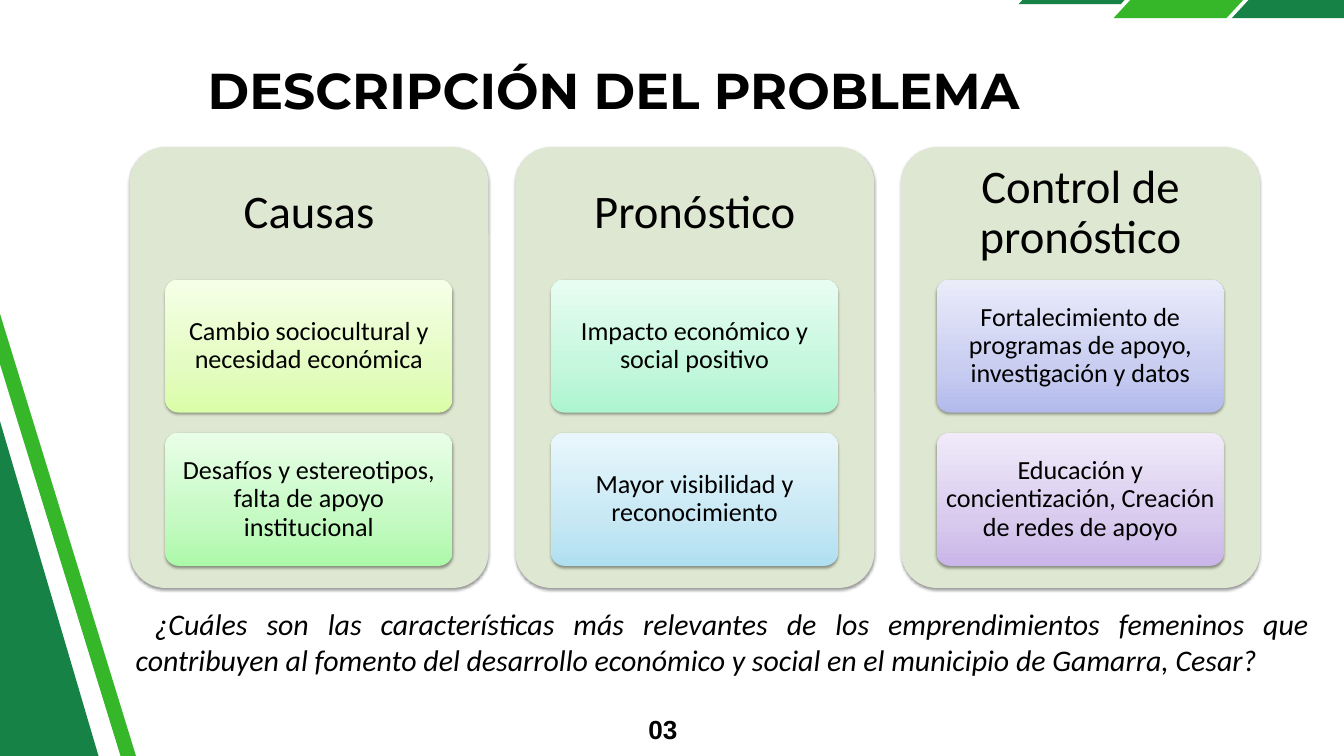
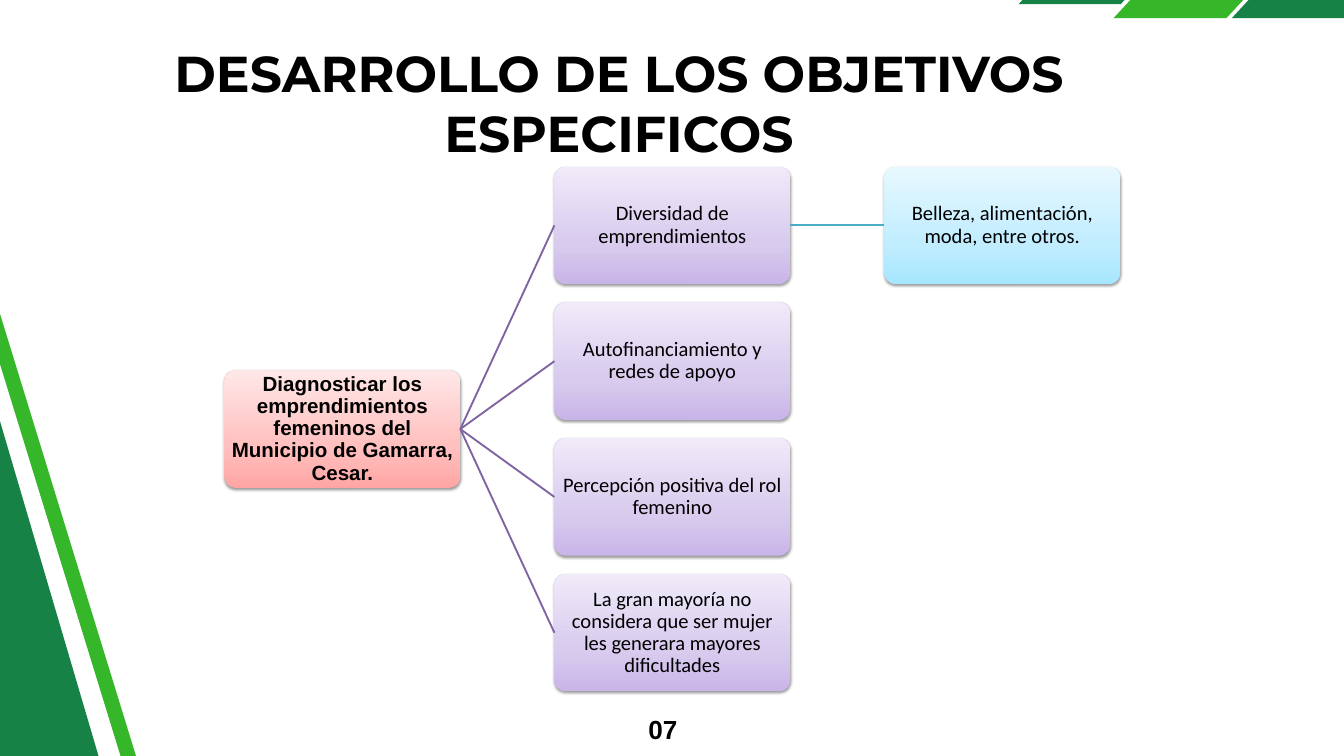
from copy import deepcopy
from dataclasses import dataclass

from lxml import etree
from pptx import Presentation
from pptx.dml.color import RGBColor
from pptx.enum.shapes import MSO_CONNECTOR, MSO_SHAPE
from pptx.enum.text import MSO_ANCHOR, MSO_AUTO_SIZE, PP_ALIGN
from pptx.oxml.ns import qn
from pptx.util import Inches, Pt

ROUNDED = MSO_SHAPE.ROUNDED_RECTANGLE
STRAIGHT = MSO_CONNECTOR.STRAIGHT
TOP, MIDDLE = MSO_ANCHOR.TOP, MSO_ANCHOR.MIDDLE
CENTER, RIGHT, JUSTIFY = PP_ALIGN.CENTER, PP_ALIGN.RIGHT, PP_ALIGN.JUSTIFY
NO_AUTOFIT = MSO_AUTO_SIZE.NONE
LEFT_SITE, RIGHT_SITE = 1, 3


@dataclass(frozen=True)
class Theme:
    title_font: str = "Montserrat"
    body_font: str = "Calibri"
    label_font: str = "Arial"
    title_size: int = 54
    heading_size: int = 50
    question_size: int = 32
    card_size: int = 28
    node_size: int = 22
    number_size: int = 28
    text: str = "000000"
    dark_green: str = "168246"
    bright_green: str = "35B729"
    panel: tuple = ("DEE7D1",)
    lime: tuple = ("DAFDA7", "E4FCC2", "F5FFE7")
    green: tuple = ("ACF9AA", "C5FAC3", "E8FEE7")
    mint: tuple = ("ACF5D0", "C5F7DD", "E8FDF2")
    aqua: tuple = ("AFE0F1", "C7E8F4", "E9F7FC")
    periwinkle: tuple = ("B2BAEC", "C9CEF1", "EAECFA")
    violet: tuple = ("C9B5E8", "D8CBEE", "F0EAF9")
    coral: tuple = ("FFA6A5", "FFC0BF", "FFE7E7")
    sky: tuple = ("A7E6FF", "C1EDFF", "E7F8FF")
    violet_line: str = "8064A2"
    sky_line: str = "4BACC6"


theme = Theme()


def write_text(shape, text, size, font, align=CENTER, anchor=TOP,
               margins=(0, 0, 0, 0), spacing=None, bold=False, italic=False):
    frame = shape.text_frame
    frame.word_wrap = True
    frame.auto_size = NO_AUTOFIT
    frame.vertical_anchor = anchor
    (frame.margin_left, frame.margin_top,
     frame.margin_right, frame.margin_bottom) = map(Inches, margins)
    paragraph = frame.paragraphs[0]
    paragraph.alignment = align
    paragraph.line_spacing = spacing
    run = paragraph.add_run()
    run.text = text
    run.font.name = font
    run.font.size = Pt(size)
    run.font.bold = bold
    run.font.italic = italic
    run.font.color.rgb = RGBColor.from_string(theme.text)


def add_card(slide, box, colours, text, size, margins, font=theme.body_font, bold=False):
    card = slide.shapes.add_shape(ROUNDED, *map(Inches, box))
    card.adjustments[0] = 0.1
    card.line.fill.background()
    properties = card.element.spPr
    if len(colours) == 1:
        card.fill.solid()
        card.fill.fore_color.rgb = RGBColor.from_string(colours[0])
    else:
        card.fill.gradient()
        card.fill.gradient_angle = 90
        stops = properties.find(".//" + qn("a:gsLst"))
        stops.insert(1, deepcopy(stops[0]))
        for stop, colour, position in zip(card.fill.gradient_stops, colours, (0, 0.35, 1)):
            stop.color.rgb = RGBColor.from_string(colour)
            stop.position = position
    card.shadow.inherit = False
    shadow = etree.SubElement(properties.find(qn("a:effectLst")), qn("a:outerShdw"),
                              blurRad="40000", dist="20000", dir="5400000", rotWithShape="0")
    shadow_colour = etree.SubElement(shadow, qn("a:srgbClr"), val="000000")
    etree.SubElement(shadow_colour, qn("a:alpha"), val="38000")
    write_text(card, text, size, font, CENTER, MIDDLE, margins, 0.9, bold)
    return card


presentation = Presentation()
presentation.slide_width = Inches(20)
presentation.slide_height = Inches(11.25)
layout = presentation.slide_layouts[5]

slides = []
for title, title_box, number in (
    ("DESCRIPCIÓN DEL PROBLEMA", (2.25, 0.88, 13.76, 0.91), "03"),
    ("DESARROLLO DE LOS OBJETIVOS ESPECIFICOS", (2.25, 0.62, 13.92, 1.82), "07"),
):
    slide = presentation.slides.add_slide(layout)
    heading = slide.shapes.title
    heading.left, heading.top, heading.width, heading.height = map(Inches, title_box)
    write_text(heading, title, theme.title_size, theme.title_font, bold=True)
    page_number = slide.shapes.add_textbox(*map(Inches, (9.52, 10.54, 0.56, 0.5)))
    write_text(page_number, number, theme.number_size, theme.label_font, RIGHT,
               spacing=Pt(39.2), bold=True)
    slides.append(slide)

problem_slide, objectives_slide = slides

for left, top, width, height, skew, rotation, colour in (
    (15.16, -0.86, 2.37, 0.92, 0.85, 0, theme.dark_green),
    (16.57, -1.06, 2.91, 1.33, 1.23, 0, theme.bright_green),
    (18.33, -1.06, 2.91, 1.33, 1.23, 0, theme.dark_green),
    (-10.09, 6.23, 16.41, 5.01, 0, 253.6, theme.dark_green),
    (-7.08, 8.59, 16.41, 0.22, 0, 252.9, theme.bright_green),
):
    right, bottom = left + width, top + height
    builder = problem_slide.shapes.build_freeform(Inches(left + skew), Inches(top))
    builder.add_line_segments([
        (Inches(x), Inches(y))
        for x, y in ((right, top), (right - skew, bottom), (left, bottom))
    ])
    band = builder.convert_to_shape()
    band.rotation = rotation
    band.fill.solid()
    band.fill.fore_color.rgb = RGBColor.from_string(colour)
    band.line.fill.background()
    band.shadow.inherit = False
    layout.shapes.element.append(band.element)

question = problem_slide.shapes.add_textbox(*map(Inches, (1.92, 8.96, 17.67, 1.18)))
write_text(question, " ¿Cuáles son las características más relevantes de los emprendimientos "
           "femeninos que contribuyen al fomento del desarrollo económico y social en el "
           "municipio de Gamarra, Cesar?", theme.question_size, theme.body_font, JUSTIFY,
           margins=(0.1, 0.05, 0.1, 0.05), italic=True)

columns = (
    ("Causas", (
        ("Cambio sociocultural y necesidad económica", theme.lime),
        ("Desafíos y estereotipos, falta de apoyo institucional", theme.green))),
    ("Pronóstico", (
        ("Impacto económico y social positivo", theme.mint),
        ("Mayor visibilidad y reconocimiento", theme.aqua))),
    ("Control de pronóstico", (
        ("Fortalecimiento de programas de apoyo, investigación y datos", theme.periwinkle),
        ("Educación y concientización, Creación de redes de apoyo", theme.violet))),
)
for column, (heading, cards) in enumerate(columns):
    panel_left = 1.93 + 5.74 * column
    add_card(problem_slide, (panel_left, 2.19, 5.34, 6.56), theme.panel, heading,
             theme.heading_size, (0.21, 0.21, 0.21, 4.8))
    for row, (text, colours) in enumerate(cards):
        add_card(problem_slide, (panel_left + 0.53, 4.16 + 2.28 * row, 4.27, 1.98), colours,
                 text, theme.card_size, (0.08, 0.06, 0.08, 0.06))

node_width, node_height = 3.51, 1.75
node_margins = (0.02, 0.02, 0.02, 0.02)
objective_left, finding_left, example_left = (3.34 + 4.91 * level for level in range(3))
first_top, row_pitch = 2.48, 2.02

objective = add_card(
    objectives_slide, (objective_left, first_top + 1.5 * row_pitch, node_width, node_height),
    theme.coral, "Diagnosticar los emprendimientos femeninos del Municipio de Gamarra, Cesar.",
    theme.node_size, node_margins, theme.label_font, True)
findings = [
    add_card(objectives_slide,
             (finding_left, first_top + row_pitch * row, node_width, node_height),
             theme.violet, text, theme.node_size, node_margins)
    for row, text in enumerate((
        "Diversidad de emprendimientos",
        "Autofinanciamiento y redes de apoyo",
        "Percepción positiva del rol femenino",
        "La gran mayoría no considera que ser mujer les generara mayores dificultades"))
]
example = add_card(objectives_slide, (example_left, first_top, node_width, node_height),
                   theme.sky, "Belleza, alimentación, moda, entre otros.",
                   theme.node_size, node_margins)

links = [(objective, finding, theme.violet_line) for finding in findings]
links.append((findings[0], example, theme.sky_line))
for source, target, colour in links:
    connector = objectives_slide.shapes.add_connector(STRAIGHT, 0, 0, 0, 0)
    connector.begin_connect(source, RIGHT_SITE)
    connector.end_connect(target, LEFT_SITE)
    connector.line.color.rgb = RGBColor.from_string(colour)
    connector.line.width = Pt(2)
    etree.SubElement(connector.element.spPr, qn("a:effectLst"))

presentation.save("out.pptx")
